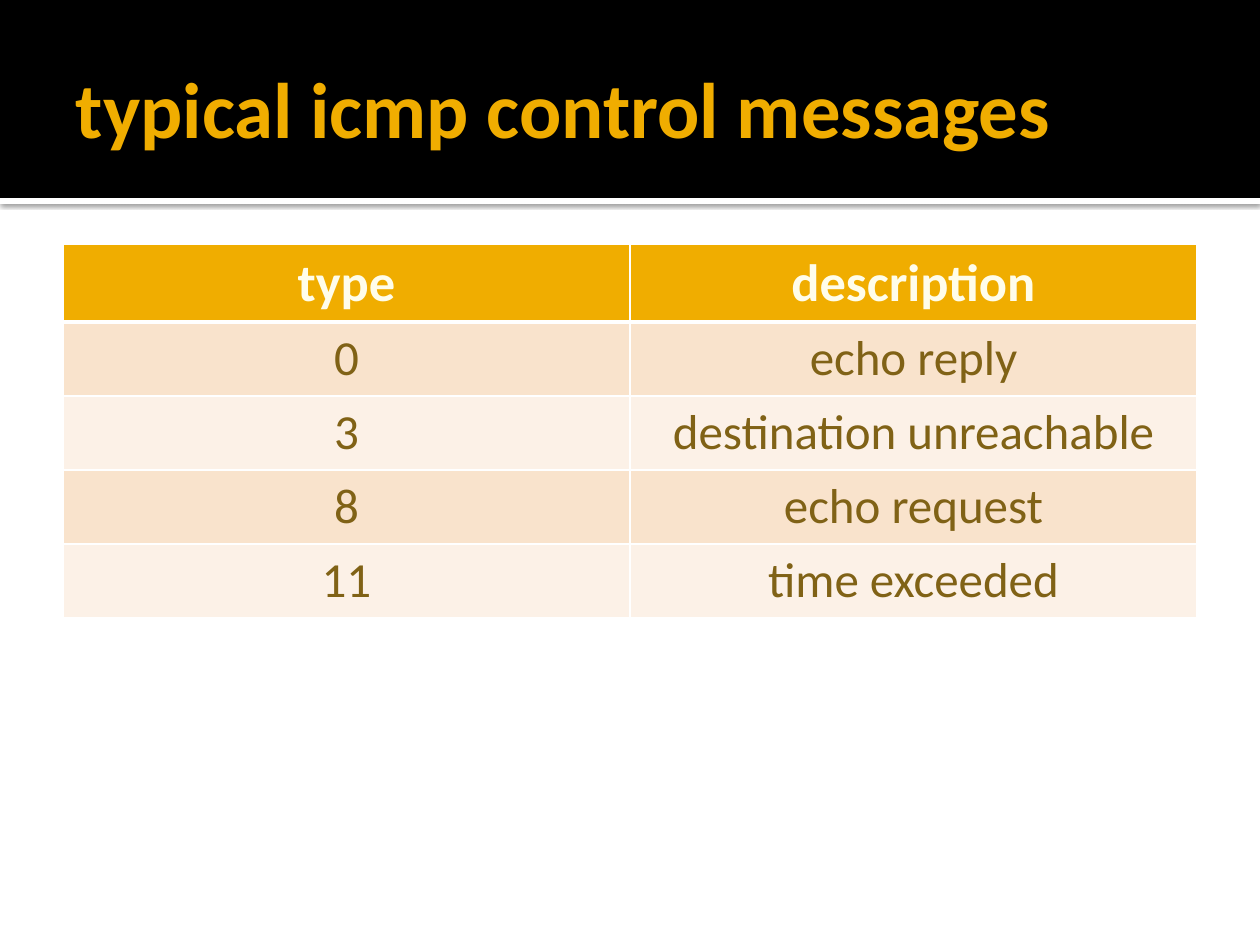
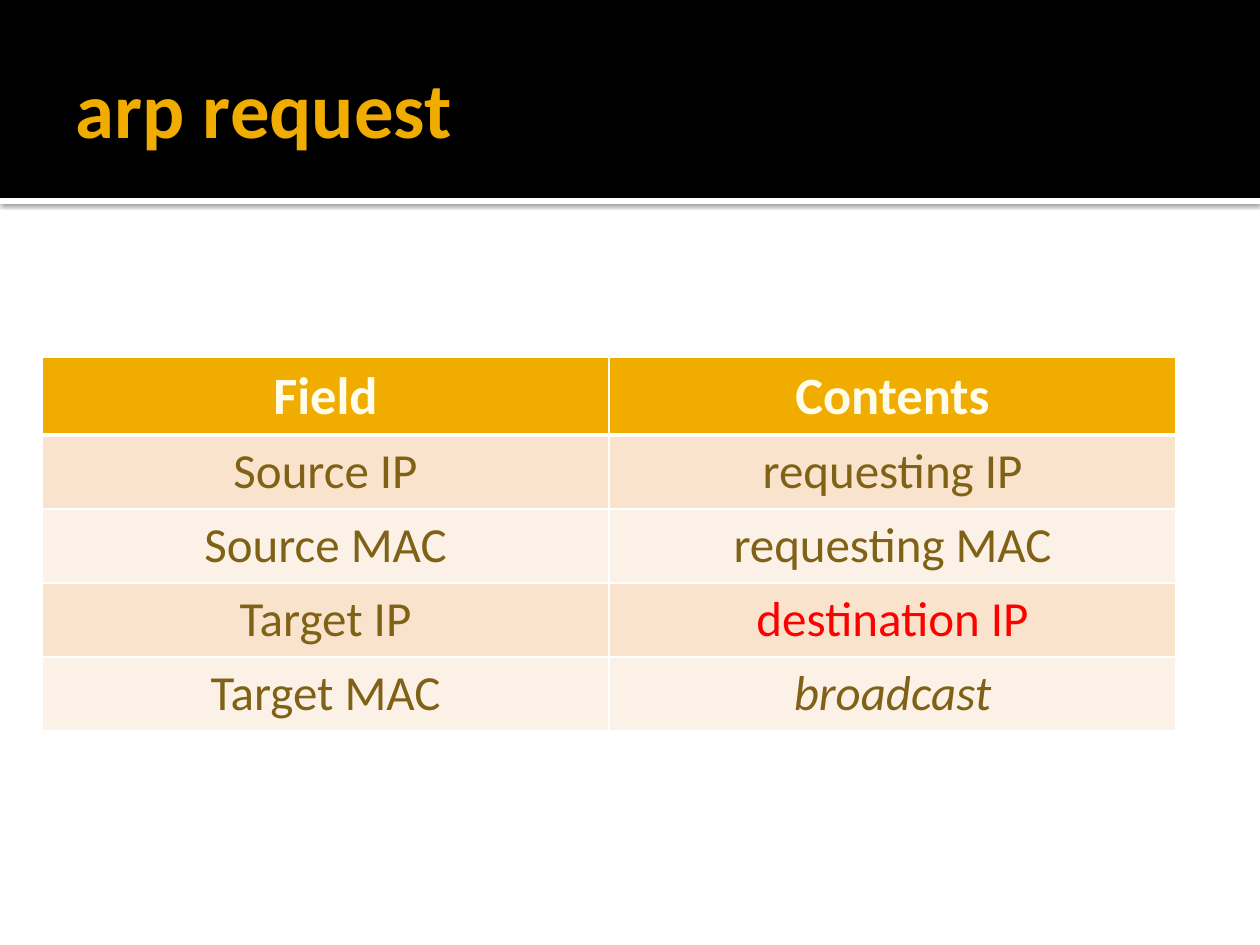
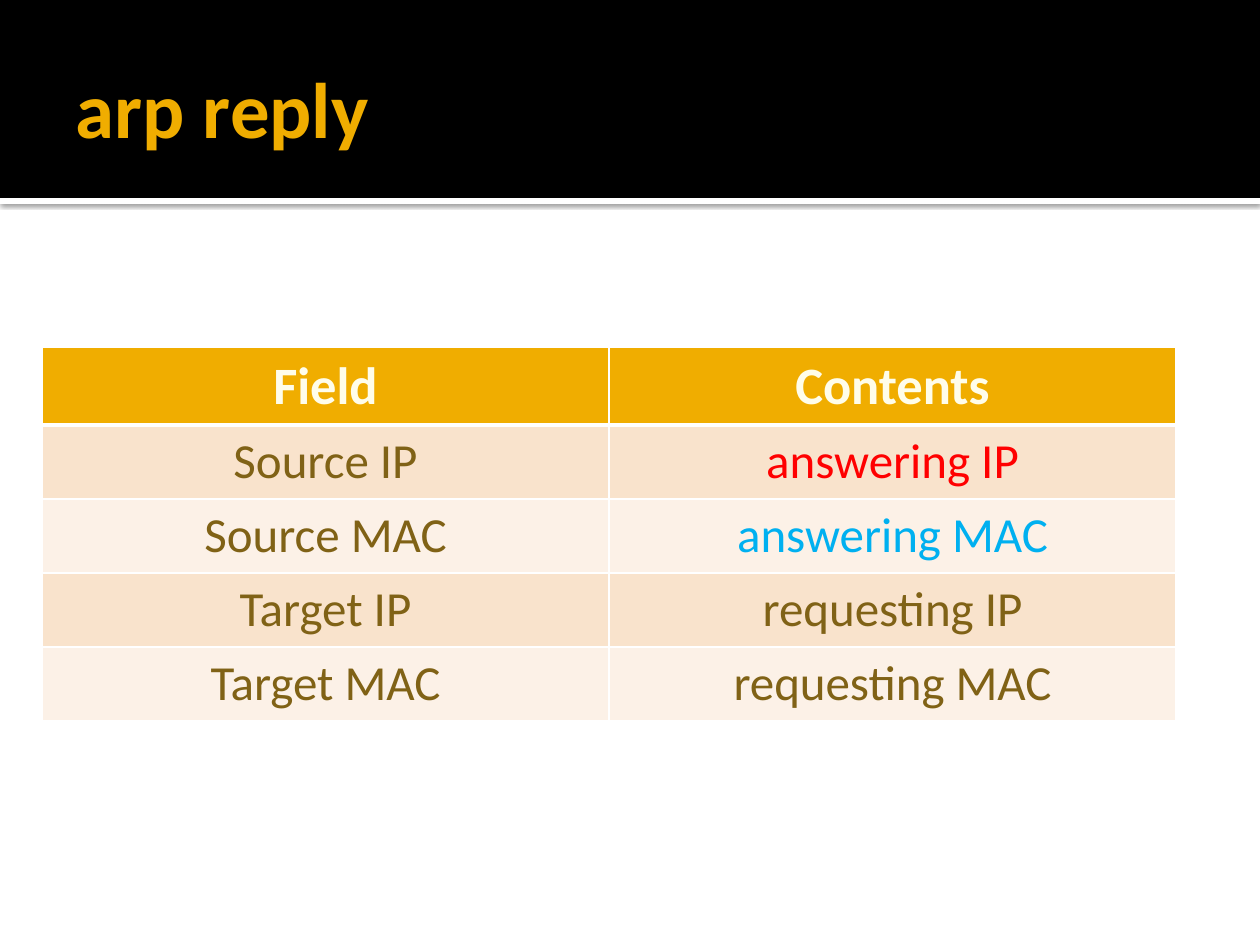
from dataclasses import dataclass
from typing import Any

from lxml import etree
from pptx import Presentation
from pptx.dml.color import RGBColor
from pptx.enum.shapes import MSO_SHAPE
from pptx.enum.text import MSO_ANCHOR, MSO_AUTO_SIZE, PP_ALIGN
from pptx.oxml.ns import qn
from pptx.util import Emu, Pt

RECT = MSO_SHAPE.RECTANGLE
MIDDLE = MSO_ANCHOR.MIDDLE
NO_FIT = MSO_AUTO_SIZE.NONE
LEFT, CENTER = PP_ALIGN.LEFT, PP_ALIGN.CENTER
TITLE_ONLY = 5


@dataclass(frozen=True)
class Theme:
    font: str = "Calibri"
    white: str = "FFFFFF"
    black: str = "000000"
    gold: str = "F0AD00"
    cream: str = "FFFDEA"
    brown: str = "806216"
    red: str = "FF0000"
    blue: str = "00B0F0"
    bands: tuple[str, str] = ("F9E3CC", "FCF1E7")
    title: int = 45
    head: int = 30
    body: int = 28
    thin: int = 1
    thick: int = 3


@dataclass(frozen=True)
class Box:
    x: int
    y: int
    w: int
    h: int


@dataclass(frozen=True)
class Item:
    text: str
    color: str
    italic: bool = False


@dataclass(frozen=True)
class Page:
    title: str
    x: int
    y: int
    rows: list[tuple[str | Item, str | Item]]


THEME = Theme()
WIDE, HIGH = 1260, 945
STRIP = Box(0, 198, WIDE, 6)
BAND = Box(0, 0, WIDE, 198)
TITLE = Box(63, 21, 1134, 173)
COL, HEAD_H, ROW_H, INSET = 567, 77, 74, 7

PAGES = [
    Page("typical icmp control messages", 63, 244, [
        ("type", "description"),
        ("0", "echo reply"),
        ("3", "destination unreachable"),
        ("8", "echo request"),
        ("11", "time exceeded"),
    ]),
    Page("arp request", 42, 357, [
        ("Field", "Contents"),
        ("Source IP", "requesting IP"),
        ("Source MAC", "requesting MAC"),
        ("Target IP", Item("destination IP", THEME.red)),
        ("Target MAC", Item("broadcast", THEME.brown, True)),
    ]),
    Page("arp reply", 42, 347, [
        ("Field", "Contents"),
        ("Source IP", Item("answering IP", THEME.red)),
        ("Source MAC", Item("answering MAC", THEME.blue)),
        ("Target IP", "requesting IP"),
        ("Target MAC", "requesting MAC"),
    ]),
]


def px(n: int) -> Emu:
    return Emu(round(n * 914400 / 126))


def rgb(color: str) -> RGBColor:
    return RGBColor.from_string(color)


def area(box: Box) -> tuple[Emu, ...]:
    return px(box.x), px(box.y), px(box.w), px(box.h)


def apply(target: Any, values: dict[str, Any]) -> None:
    for name, value in values.items():
        setattr(target, name, value)


def margins(left: int, rest: int) -> dict[str, Emu]:
    sides = {f"margin_{side}": px(rest) for side in ("top", "right", "bottom")}
    return {"margin_left": px(left), **sides}


def write(frame: Any, text: str, size: int, color: str, align: Any,
          bold: bool = False, italic: bool = False) -> None:
    para = frame.paragraphs[0]
    para.alignment = align
    run = para.add_run()
    run.text = text
    apply(run.font, {"name": THEME.font, "size": Pt(size),
                     "bold": bold, "italic": italic})
    run.font.color.rgb = rgb(color)


# Header band and its shaded strip, shared through the layout
def add_bar(slide: Any, box: Box, color: str) -> Any:
    bar = slide.shapes.add_shape(RECT, *area(box))
    bar.shadow.inherit = False
    bar.fill.solid()
    bar.fill.fore_color.rgb = rgb(color)
    bar.line.fill.background()
    return bar


def add_shade(bar: Any) -> None:
    effects = bar.element.spPr.find(qn("a:effectLst"))
    shade = etree.SubElement(effects, qn("a:outerShdw"), blurRad=str(Pt(2.5)),
                             dist=str(Pt(0.8)), dir="5400000", algn="t",
                             rotWithShape="0")
    tint = etree.SubElement(shade, qn("a:srgbClr"), val=THEME.black)
    etree.SubElement(tint, qn("a:alpha"), val="60000")


def share_bars(slide: Any) -> None:
    strip = add_bar(slide, STRIP, THEME.white)
    add_shade(strip)
    band = add_bar(slide, BAND, THEME.black)
    tree = slide.slide_layout.shapes.element
    for spot, bar in enumerate((strip, band), start=2):
        tree.insert(spot, bar.element)


# Title
def add_title(slide: Any, text: str) -> None:
    title = slide.shapes.title
    apply(title, dict(zip(("left", "top", "width", "height"), area(TITLE))))
    frame = title.text_frame
    apply(frame, {"vertical_anchor": MIDDLE, "word_wrap": True,
                  "auto_size": NO_FIT, **margins(13, 6)})
    write(frame, text, THEME.title, THEME.gold, LEFT, bold=True)


# Table
def add_edges(cell: Any, head: bool) -> None:
    widths = {"lnL": THEME.thin, "lnR": THEME.thin}
    if head:
        widths["lnT"] = THEME.thin
    widths["lnB"] = THEME.thick if head else THEME.thin
    props = cell._tc.get_or_add_tcPr()
    for name, width in widths.items():
        edge = etree.SubElement(props, qn(f"a:{name}"), w=str(Pt(width)))
        fill = etree.SubElement(edge, qn("a:solidFill"))
        etree.SubElement(fill, qn("a:srgbClr"), val=THEME.white)


def fill_cell(cell: Any, entry: str | Item, row: int) -> None:
    head = row == 0
    add_edges(cell, head)
    cell.fill.solid()
    back = THEME.gold if head else THEME.bands[(row - 1) % 2]
    cell.fill.fore_color.rgb = rgb(back)
    apply(cell, {"vertical_anchor": MIDDLE, **margins(INSET, INSET)})
    if isinstance(entry, str):
        entry = Item(entry, THEME.cream if head else THEME.brown)
    size = THEME.head if head else THEME.body
    write(cell.text_frame, entry.text, size, entry.color, CENTER,
          bold=head, italic=entry.italic)


def add_grid(slide: Any, page: Page) -> None:
    rows, cols = len(page.rows), len(page.rows[0])
    box = Box(page.x, page.y, COL * cols, HEAD_H + ROW_H * (rows - 1))
    grid = slide.shapes.add_table(rows, cols, *area(box)).table
    for col in grid.columns:
        col.width = px(COL)
    for r, entries in enumerate(page.rows):
        grid.rows[r].height = px(ROW_H if r else HEAD_H)
        for c, entry in enumerate(entries):
            fill_cell(grid.cell(r, c), entry, r)


def main() -> None:
    deck = Presentation()
    apply(deck, {"slide_width": px(WIDE), "slide_height": px(HIGH)})
    layout = deck.slide_layouts[TITLE_ONLY]
    for num, page in enumerate(PAGES):
        slide = deck.slides.add_slide(layout)
        if num == 0:
            share_bars(slide)
        add_title(slide, page.title)
        add_grid(slide, page)
    deck.save("out.pptx")


if __name__ == "__main__":
    main()
